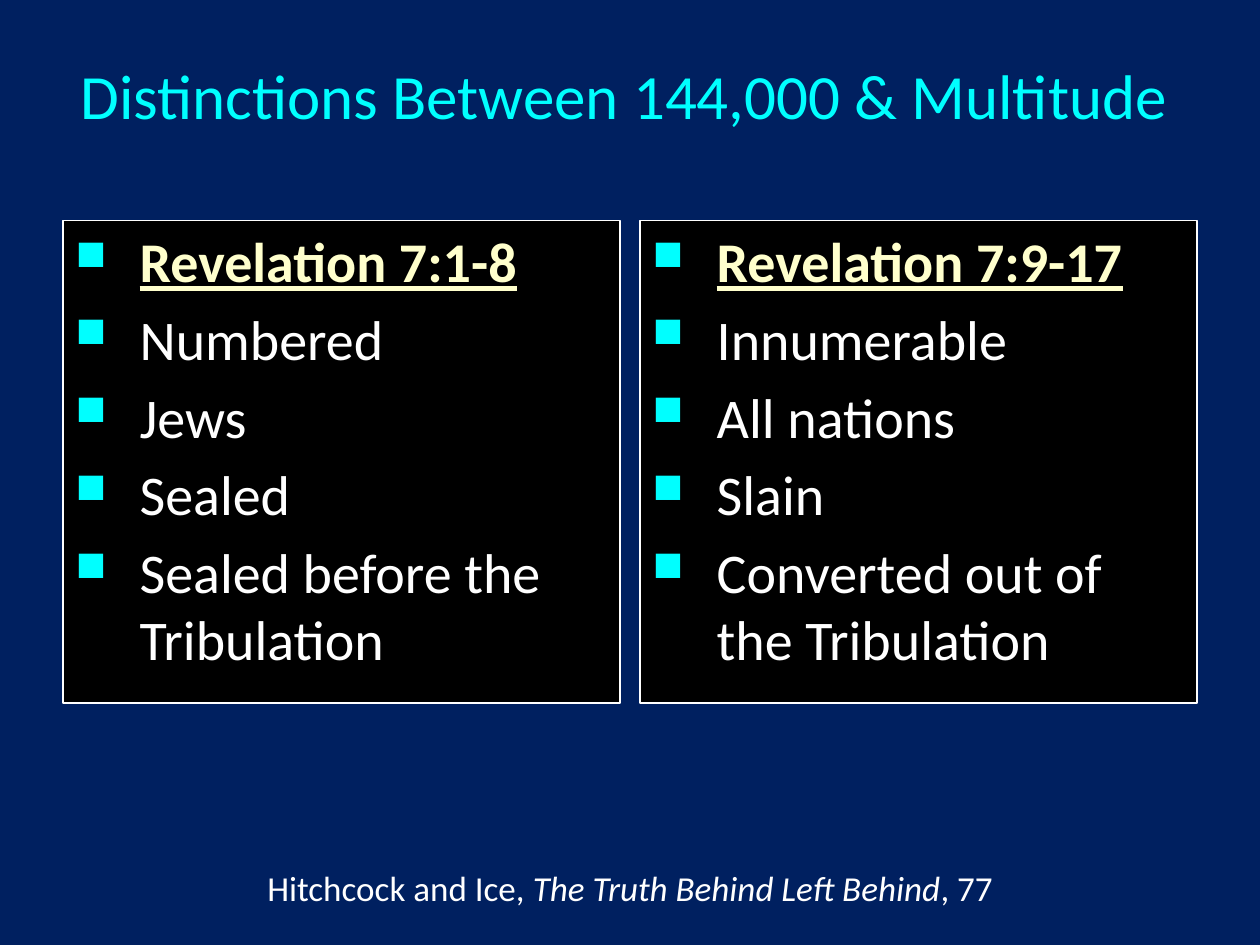
"""Build a slide contrasting the 144,000 with the multitude of Revelation 7."""
from lxml import etree
from pptx import Presentation
from pptx.dml.color import RGBColor
from pptx.enum.shapes import MSO_SHAPE
from pptx.enum.text import MSO_ANCHOR, PP_ALIGN
from pptx.oxml.ns import qn
from pptx.util import Inches, Pt

RECTANGLE = MSO_SHAPE.RECTANGLE
TOP, MIDDLE = MSO_ANCHOR.TOP, MSO_ANCHOR.MIDDLE
LEFT, CENTER = PP_ALIGN.LEFT, PP_ALIGN.CENTER
CYAN, WHITE, CREAM, BLACK, NAVY = "00FFFF", "FFFFFF", "FFFFCC", "000000", "002060"
MARGIN, COLUMN, GUTTER = Inches(0.5), Inches(4.42), Inches(0.16)
INDENT = Inches(0.51)


def style(paragraph, size, color):
    paragraph.font.name = "Calibri"
    paragraph.font.size = Pt(size)
    paragraph.font.color.rgb = RGBColor.from_string(color)


def add_bullet(paragraph):
    props = paragraph._p.get_or_add_pPr()
    props.set("marL", str(INDENT))
    props.set("indent", str(-INDENT))
    tint = etree.SubElement(props, qn("a:buClr"))
    etree.SubElement(tint, qn("a:srgbClr"), val=CYAN)
    etree.SubElement(props, qn("a:buSzPct"), val="75000")
    etree.SubElement(props, qn("a:buChar"), char="■")


prs = Presentation()
prs.slide_width, prs.slide_height = Inches(10), Inches(7.5)
slide = prs.slides.add_slide(prs.slide_layouts[6])
slide.background.fill.solid()
slide.background.fill.fore_color.rgb = RGBColor.from_string(NAVY)

heading = slide.shapes.add_textbox(Inches(0.54), Inches(0.25), Inches(8.92), Inches(1)).text_frame
heading.word_wrap = True
heading.vertical_anchor = MIDDLE
heading.text = "Distinctions Between 144,000 & Multitude"
style(heading.paragraphs[0], 36, CYAN)

groups = [
    ("Revelation 7:1-8", "Numbered", "Jews", "Sealed", "Sealed before the Tribulation"),
    ("Revelation 7:9-17", "Innumerable", "All nations", "Slain", "Converted out of the Tribulation"),
]
for column, traits in enumerate(groups):
    panel = slide.shapes.add_shape(
        RECTANGLE, MARGIN + column * (COLUMN + GUTTER), Inches(1.75), COLUMN, Inches(3.83))
    panel.shadow.inherit = False
    panel.fill.solid()
    panel.fill.fore_color.rgb = RGBColor.from_string(BLACK)
    panel.line.color.rgb = RGBColor.from_string(WHITE)
    panel.line.width = Pt(0.75)
    panel.text_frame.word_wrap = True
    panel.text_frame.vertical_anchor = TOP
    panel.text_frame.text = "\n".join(traits)
    for row, trait in enumerate(panel.text_frame.paragraphs):
        passage = row == 0
        trait.alignment = LEFT
        trait.space_before = Pt(0 if passage else 6)
        add_bullet(trait)
        style(trait, 32, CREAM if passage else WHITE)
        trait.font.bold = trait.font.underline = passage

source = slide.shapes.add_textbox(Inches(0.79), Inches(6.83), Inches(8.42), Inches(0.44)).text_frame
source.word_wrap = True
citation = source.paragraphs[0]
citation.alignment = CENTER
style(citation, 20, WHITE)
for words, italic in (
    ("Hitchcock and Ice, ", False),
    ("The Truth Behind Left Behind", True),
    (", 77", False),
):
    part = citation.add_run()
    part.text = words
    part.font.italic = italic

prs.save("out.pptx")
